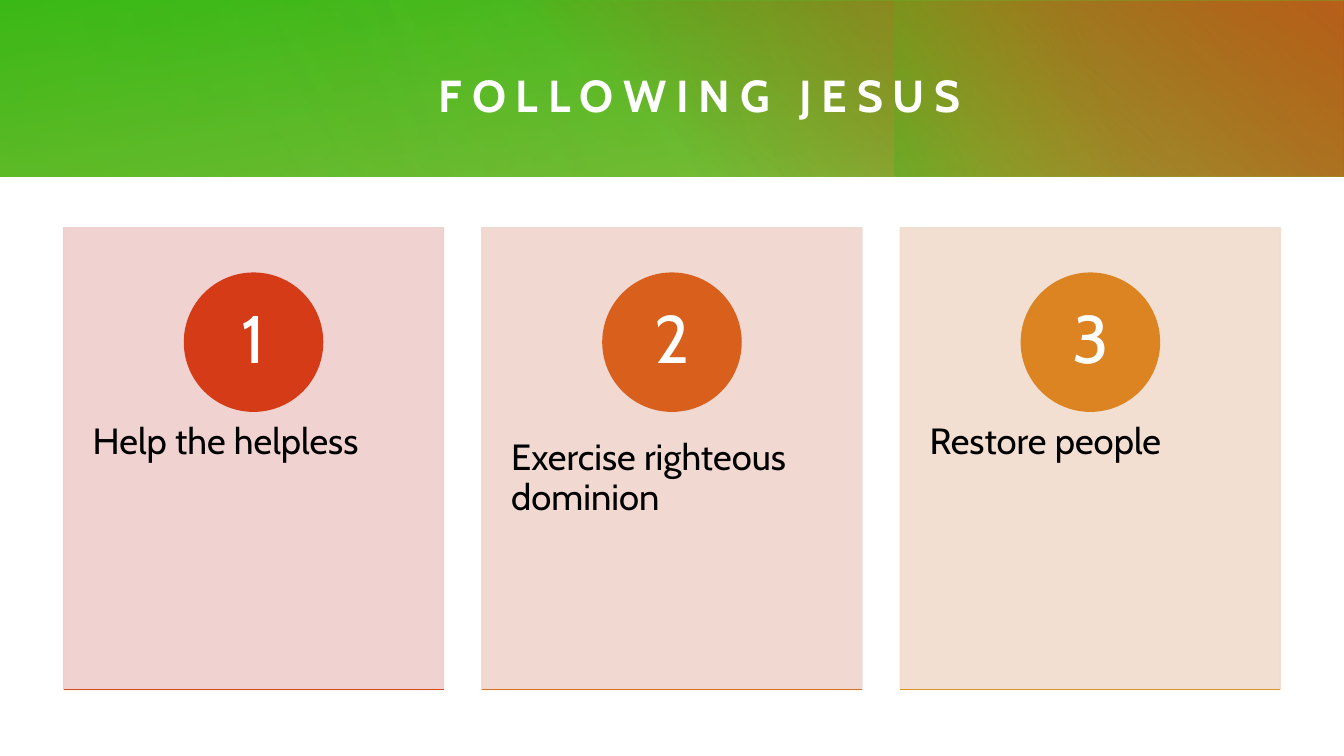
from pptx import Presentation
from pptx.dml.color import RGBColor
from pptx.enum.shapes import MSO_CONNECTOR, MSO_SHAPE
from pptx.enum.text import MSO_ANCHOR, PP_ALIGN
from pptx.oxml import parse_xml
from pptx.oxml.ns import nsdecls, qn
from pptx.oxml.xmlchemy import OxmlElement
from pptx.util import Inches, Pt

FONT = "Cabin"
WHITE, BLACK = "FFFFFF", "000000"

# left, top, width, height, rotation, gradient angle, stops (position, colour, opacity)
BANNER_LAYERS = [
    (0, 0, 13.33, 1.75, 0, 260, [(0, "73B320", 83), (100, "2DBB14", 100)]),
    (4.81, 0.01, 8.52, 1.74, 0, 310, [(22, "D53B17", 0), (99, "D53B17", 100)]),
    (9.87, -0.99, 1.75, 3.74, 270, 250, [(45, "A6A912", 0), (99, "2DBB14", 33)]),
    (2.68, 0, 10.64, 1.75, 180, 330, [(0, "73B320", 30), (99, "73B320", 0)]),
    (0, 0, 8.65, 1.75, 0, 340, [(0, "73B320", 21), (99, "73B320", 0)]),
]

# text, panel, circle, base line
CARDS = [
    ("Help the helpless", "EFCECC", "D53B17", "D74D1A"),
    ("Exercise righteous dominion", "F0D5CD", "D95F1C", "DA711F"),
    ("Restore people", "F1DCCD", "DC8322", "DB9427"),
]


def color(value):
    return RGBColor.from_string(value)


def set_opacity(element, percent):
    """Make every colour inside the element partly transparent."""
    for tint in element.iter(qn("a:srgbClr")):
        alpha = OxmlElement("a:alpha")
        alpha.set("val", str(percent * 1000))
        tint.append(alpha)


def add_filled(page, kind, left, top, width, height, fill):
    shape = page.shapes.add_shape(
        kind, Inches(left), Inches(top), Inches(width), Inches(height))
    shape.shadow.inherit = False
    shape.fill.solid()
    shape.fill.fore_color.rgb = color(fill)
    shape.line.color.rgb = color(fill)
    shape.line.width = Pt(1)
    return shape


def set_gradient(shape, angle, stops):
    """Replace the solid fill with a linear gradient, angle clockwise in degrees."""
    marks = "".join(
        f'<a:gs pos="{position * 1000}"><a:srgbClr val="{tint}">'
        f'<a:alpha val="{opacity * 1000}"/></a:srgbClr></a:gs>'
        for position, tint, opacity in stops)
    gradient = parse_xml(
        f'<a:gradFill {nsdecls("a")} rotWithShape="1"><a:gsLst>{marks}</a:gsLst>'
        f'<a:lin ang="{angle * 60000}" scaled="0"/></a:gradFill>')
    properties = shape._element.spPr
    properties.replace(properties.find(qn("a:solidFill")), gradient)


def write(box, text, size, tint, align, anchor, inset_x, inset_y, spacing=0.9):
    frame = box.text_frame
    frame.word_wrap = True
    frame.vertical_anchor = anchor
    frame.margin_left = frame.margin_right = Inches(inset_x)
    frame.margin_top = frame.margin_bottom = Inches(inset_y)
    para = frame.paragraphs[0]
    para.alignment = align
    para.line_spacing = spacing
    span = para.add_run()
    span.text = text
    span.font.name = FONT
    span.font.size = Pt(size)
    span.font.color.rgb = color(tint)
    return span


def add_banner(page):
    for left, top, width, height, rotation, angle, stops in BANNER_LAYERS:
        layer = add_filled(page, MSO_SHAPE.RECTANGLE, left, top, width, height, WHITE)
        layer.line.fill.background()
        layer.rotation = rotation
        set_gradient(layer, angle, stops)


def add_title(page, left, top, width, height):
    box = page.shapes.add_textbox(
        Inches(left), Inches(top), Inches(width), Inches(height))
    span = write(box, "FOLLOWING JESUS", 32, WHITE, PP_ALIGN.CENTER,
                 MSO_ANCHOR.MIDDLE, 0, 0, spacing=1.0)
    span.font.bold = True
    span.font._element.set("spc", "700")


def add_card(page, left, top, width, height, number, card):
    text, panel_color, circle_color, line_color = card
    panel = add_filled(page, MSO_SHAPE.RECTANGLE, left, top, width, height, panel_color)
    set_opacity(panel._element.spPr, 90)

    body = page.shapes.add_textbox(
        Inches(left), Inches(top + 1.74), Inches(width), Inches(0.6 * height))
    write(body, text, 26, BLACK, PP_ALIGN.LEFT, MSO_ANCHOR.TOP, 0.29, 0.36)

    diameter = 1.37
    circle = add_filled(page, MSO_SHAPE.OVAL, left + (width - diameter) / 2,
                        top + 0.45, diameter, diameter, circle_color)
    write(circle, str(number), 48, WHITE, PP_ALIGN.CENTER, MSO_ANCHOR.MIDDLE, 0.11, 0.01)

    bottom = Inches(top + height)
    base = page.shapes.add_connector(
        MSO_CONNECTOR.STRAIGHT, Inches(left), bottom, Inches(left + width), bottom)
    base.line.color.rgb = color(line_color)
    base.line.width = Pt(1)
    base._element.spPr.append(OxmlElement("a:effectLst"))


def add_cards(page, left, top, width, height, gap):
    for index, card in enumerate(CARDS):
        add_card(page, left + index * (width + gap), top, width, height, index + 1, card)


def main():
    deck = Presentation()
    deck.slide_width, deck.slide_height = Inches(13.33), Inches(7.5)
    page = deck.slides.add_slide(deck.slide_layouts[6])
    add_banner(page)
    add_title(page, 1.27, 0.41, 11.35, 1.06)
    add_cards(page, 0.63, 2.26, 3.77, 4.58, gap=0.38)
    deck.save("out.pptx")


if __name__ == "__main__":
    main()
